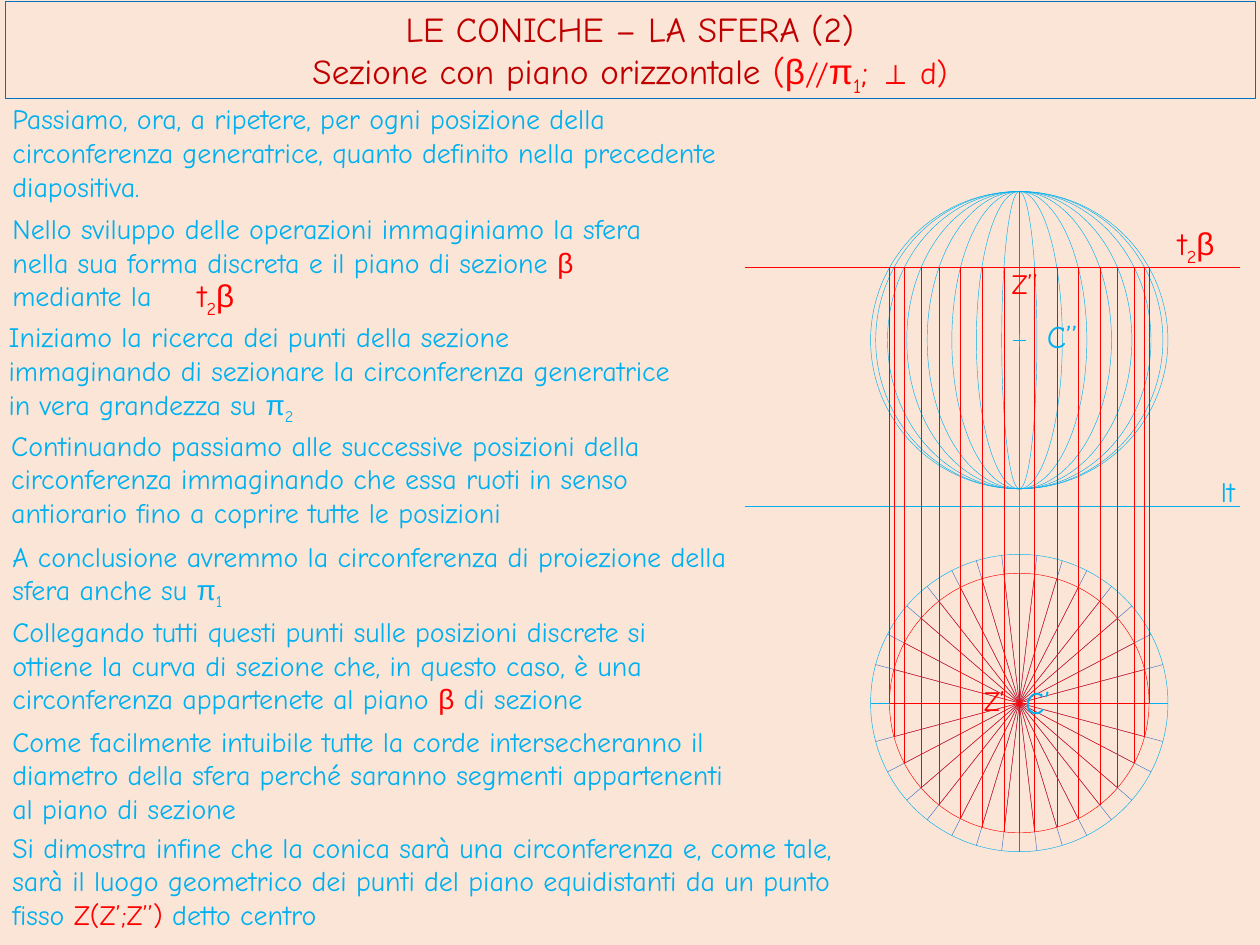
from dataclasses import dataclass
from math import cos, radians, sin

from lxml import etree
from pptx import Presentation
from pptx import util as u
from pptx.dml.color import RGBColor
from pptx.enum import shapes, text
from pptx.oxml.ns import qn


@dataclass(frozen=True)
class Theme:
    paper: str = "FBE5D6"
    border: str = "0070C0"
    title: str = "C00000"
    sky: str = "00B0F0"
    blue: str = "4472C4"
    red: str = "FF0000"
    latin: str = "Comic Neue"
    greek: str = "Arial"
    heading: float = 20
    label: float = 18
    body: float = 16
    hairline: float = 0.25


THEME = Theme()


@dataclass(frozen=True)
class Span:
    words: str
    color: str = THEME.sky
    size: float = THEME.body
    font: str = THEME.latin
    lowered: bool = False
    bold: bool = False


@dataclass(frozen=True)
class Note:
    left: float
    top: float
    width: float
    height: float
    spans: tuple[Span, ...]
    anchor: text.MSO_ANCHOR = text.MSO_ANCHOR.TOP


@dataclass(frozen=True)
class Circle:
    x: float
    y: float
    radius: float

    def at(self, degrees: float) -> tuple[float, float]:
        """Point on the rim, counted anticlockwise from the right."""
        angle = radians(degrees)
        return self.x + self.radius * cos(angle), self.y - self.radius * sin(angle)


FRONT = Circle(8.09, 2.7, 1.18)
PLAN = Circle(8.09, 5.58, 1.18)
SECTION = Circle(8.09, 5.58, 1.03)
CUT_Y = 2.12
GROUND_Y = 4.02
TRACE_LEFT, TRACE_RIGHT = 5.91, 9.84
# Positions of the turning generating circle, in degrees
TURNS = (15, 27.6, 40.8, 51.7, 63, 73.2, 83.2)


def red(words: str, size: float = THEME.label, **style) -> Span:
    return Span(words, THEME.red, size, **style)


TRACE_NAME = (red("t"), red("2", lowered=True), red("β", font=THEME.greek))

TITLE = (
    (Span("LE CONICHE – LA SFERA (2)", THEME.title, THEME.heading),),
    (
        Span("Sezione con piano orizzontale ", THEME.title, THEME.heading),
        red("(", THEME.heading),
        red("β", THEME.heading, font=THEME.greek),
        red("//"),
        red("π", THEME.heading, font=THEME.greek),
        red("1", THEME.heading, lowered=True),
        red("; ", THEME.heading),
        red("⊥ ", font=THEME.greek, bold=True),
        red("d)"),
    ),
)

NOTES = (
    Note(0, 0.76, 6.22, 0.91, (Span("Passiamo, ora, a ripetere, per ogni posizione della circonferenza generatrice, quanto definito nella precedente diapositiva."),)),
    Note(-0.03, 2.49, 5.52, 0.91, (
        Span("Iniziamo la ricerca dei punti della sezione immaginando di sezionare la circonferenza generatrice in vera grandezza su "),
        Span("π", font=THEME.greek), Span("2", lowered=True))),
    Note(-0.01, 3.35, 5.61, 0.91, (Span("Continuando passiamo alle successive posizioni della circonferenza immaginando che essa ruoti in senso antiorario fino a coprire tutte le posizioni"),)),
    Note(0, 4.23, 5.87, 0.64, (
        Span("A conclusione avremmo la circonferenza di proiezione della sfera anche su "),
        Span("π", font=THEME.greek), Span("1", lowered=True))),
    Note(0, 4.83, 5.74, 0.91, (
        Span("Collegando tutti questi punti sulle posizioni discrete si ottiene la curva di sezione che, in questo caso, è una circonferenza appartenete al piano "),
        red("β", THEME.body, font=THEME.greek), Span(" di sezione"))),
    Note(0, 5.7, 6.07, 0.91, (Span("Come facilmente intuibile tutte la corde intersecheranno il diametro della sfera perché saranno segmenti appartenenti al piano di sezione"),)),
    Note(0, 6.54, 6.77, 0.91, (
        Span("Si dimostra infine che la conica sarà una circonferenza e, come tale, sarà il luogo geometrico dei punti del piano equidistanti da un punto fisso "),
        red("Z(Z’;Z’’) ", THEME.body), Span("detto centro"))),
)

# The section-plane paragraph and the trace name that completes its last line
PLANE_NOTES = (
    Note(0, 1.63, 5.51, 0.91, (
        Span("Nello sviluppo delle operazioni immaginiamo la sfera nella sua forma discreta e il piano di sezione "),
        red("β ", THEME.body, font=THEME.greek), Span("mediante la"))),
    Note(1.47, 2.14, 0.56, 0.4, TRACE_NAME),
)

LABELS = (
    Note(8.21, 2.47, 0.47, 0.4, (Span("C’’", size=THEME.label),), text.MSO_ANCHOR.MIDDLE),
    Note(8.04, 5.37, 0.47, 0.4, (Span("C’", size=THEME.label),), text.MSO_ANCHOR.MIDDLE),
    Note(9.59, 3.72, 0.38, 0.37, (Span("lt"),)),
    Note(9.25, 1.73, 0.56, 0.4, TRACE_NAME),
    Note(7.93, 2.07, 0.47, 0.37, (red("Z’’", THEME.body),)),
    Note(7.71, 5.38, 0.47, 0.37, (red("Z’", THEME.body),)),
)


def write_spans(para, spans: tuple[Span, ...]) -> None:
    for span in spans:
        run = para.add_run()
        run.text = span.words
        run.font.name = span.font
        run.font.size = u.Pt(span.size)
        run.font.bold = span.bold
        run.font.color.rgb = RGBColor.from_string(span.color)
        if span.lowered:
            run.font._element.set("baseline", "-25000")


def style_line(line, color: str) -> None:
    line.color.rgb = RGBColor.from_string(color)
    line.width = u.Pt(THEME.hairline)


def add_title(page) -> None:
    box = page.shapes.title
    box.left, box.top, box.width, box.height = map(u.Inches, (0.04, 0.01, 9.92, 0.77))
    box.fill.solid()
    box.fill.fore_color.rgb = RGBColor.from_string(THEME.paper)
    style_line(box.line, THEME.border)
    frame = box.text_frame
    frame.vertical_anchor = text.MSO_ANCHOR.TOP
    frame.auto_size = text.MSO_AUTO_SIZE.NONE
    for index, spans in enumerate(TITLE):
        para = frame.add_paragraph() if index else frame.paragraphs[0]
        para.alignment = text.PP_ALIGN.CENTER
        write_spans(para, spans)


def add_note(parent, note: Note) -> None:
    box = parent.add_textbox(*map(u.Inches, (note.left, note.top, note.width, note.height)))
    frame = box.text_frame
    frame.word_wrap = True
    frame.auto_size = text.MSO_AUTO_SIZE.SHAPE_TO_FIT_TEXT
    frame.vertical_anchor = note.anchor
    write_spans(frame.paragraphs[0], note.spans)


def add_line(page, start: tuple[float, float], end: tuple[float, float], color: str) -> None:
    line = page.shapes.add_connector(
        shapes.MSO_CONNECTOR.STRAIGHT, *map(u.Inches, (*start, *end)))
    style_line(line.line, color)
    etree.SubElement(line._element.spPr, qn("a:effectLst"))


def add_ellipse(page, circle: Circle, color: str, squeeze: float = 1) -> None:
    """Outline the circle, its width scaled by squeeze."""
    half = circle.radius * squeeze
    oval = page.shapes.add_shape(shapes.MSO_SHAPE.OVAL, *map(
        u.Inches, (circle.x - half, circle.y - circle.radius, 2 * half, 2 * circle.radius)))
    oval.shadow.inherit = False
    oval.fill.background()
    style_line(oval.line, color)


def add_diameter(page, circle: Circle, degrees: float, color: str) -> None:
    add_line(page, circle.at(degrees), circle.at(degrees + 180), color)


def draw_sphere(page) -> None:
    add_ellipse(page, FRONT, THEME.sky)
    add_ellipse(page, PLAN, THEME.sky)
    for turn in TURNS:
        add_ellipse(page, FRONT, THEME.sky, cos(radians(turn)))
        for degrees in (turn, 180 - turn):
            add_diameter(page, PLAN, degrees, THEME.blue)
    add_diameter(page, PLAN, 0, THEME.sky)
    add_line(page, (TRACE_LEFT, GROUND_Y), (TRACE_RIGHT, GROUND_Y), THEME.sky)
    add_line(page, (FRONT.x, FRONT.y), (PLAN.x, PLAN.y), THEME.sky)
    for center in (FRONT, PLAN):
        add_diameter(page, Circle(center.x, center.y, 0.05), 0, THEME.sky)
        add_diameter(page, center, 90, THEME.blue)
    add_diameter(page, Circle(FRONT.x, FRONT.y, 0.05), 90, THEME.sky)


def draw_section(page) -> None:
    add_line(page, (TRACE_LEFT, CUT_Y), (TRACE_RIGHT, CUT_Y), THEME.red)
    add_ellipse(page, SECTION, THEME.red)
    for degrees in (0, 90):
        add_diameter(page, SECTION, degrees, THEME.red)
    for degrees in (0, 180, *TURNS, *(180 + turn for turn in TURNS)):
        point = SECTION.at(degrees)
        add_line(page, (point[0], CUT_Y), point, THEME.red)
    for turn in TURNS:
        add_line(page, SECTION.at(turn), SECTION.at(-turn), THEME.red)
        for degrees in (turn, 180 - turn):
            add_diameter(page, SECTION, degrees, THEME.red)


def main() -> None:
    deck = Presentation()
    deck.slide_width, deck.slide_height = u.Inches(10), u.Inches(7.5)
    page = deck.slides.add_slide(deck.slide_layouts.get_by_name("Title Only"))
    page.background.fill.solid()
    page.background.fill.fore_color.rgb = RGBColor.from_string(THEME.paper)
    add_title(page)
    draw_sphere(page)
    draw_section(page)
    for note in NOTES + LABELS:
        add_note(page.shapes, note)
    group = page.shapes.add_group_shape()
    for note in PLANE_NOTES:
        add_note(group.shapes, note)
    deck.save("out.pptx")


if __name__ == "__main__":
    main()
